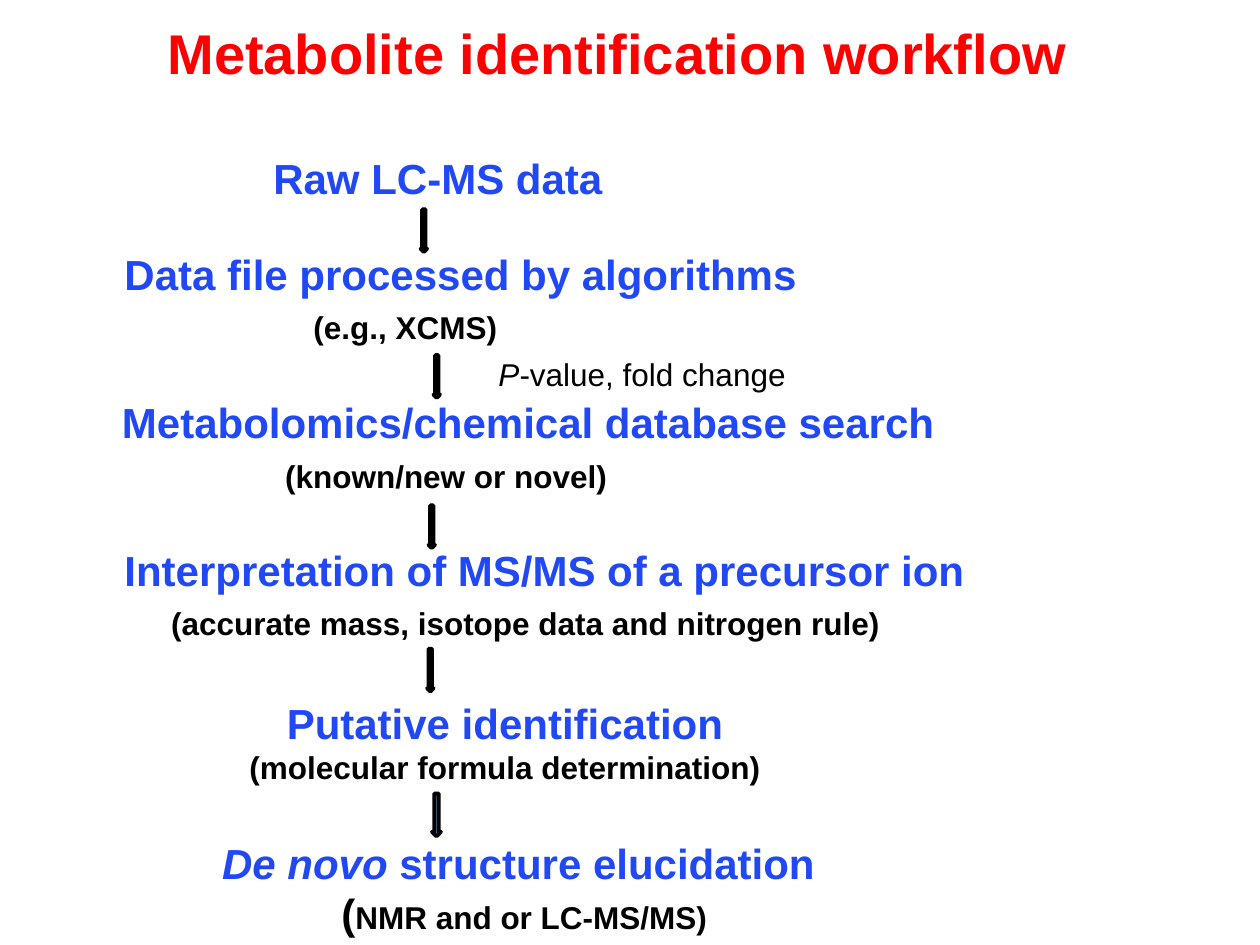
import pptx
import pptx.util
import pptx.dml.color
import pptx.enum.shapes
import pptx.enum.text

Cm, Pt = pptx.util.Cm, pptx.util.Pt
ALIGN = pptx.enum.text.PP_ALIGN
SHAPES = pptx.enum.shapes.MSO_SHAPE

RED, BLUE, BLACK, WHITE, ARROW_FILL = "FF0000", "2048F5", "000000", "FFFFFF", "4F81BD"
STEP_SIZE, NOTE_SIZE = 24, 18


def rgb(value):
    return pptx.dml.color.RGBColor.from_string(value)


class Workflow:
    """Holds the style and the slide being filled."""

    def __init__(self, slide, font="Arial"):
        self.slide = slide
        self.font = font

    def style(self, font, size, color, bold=True):
        font.name, font.size, font.bold = self.font, Pt(size), bold
        font.color.rgb = rgb(color)

    def prepare(self, frame):
        frame.word_wrap = True
        frame.auto_size = pptx.enum.text.MSO_AUTO_SIZE.NONE
        frame.vertical_anchor = pptx.enum.text.MSO_ANCHOR.TOP
        return frame

    def title(self, text, left, top, width, height):
        heading = self.slide.shapes.title
        heading.left, heading.top = Cm(left), Cm(top)
        heading.width, heading.height = Cm(width), Cm(height)
        paragraph = self.prepare(heading.text_frame).paragraphs[0]
        paragraph.text = text
        paragraph.alignment = ALIGN.LEFT
        self.style(paragraph.font, 32, RED)

    def text_box(self, left, top, width, height):
        box = self.slide.shapes.add_textbox(Cm(left), Cm(top), Cm(width), Cm(height))
        return self.prepare(box.text_frame)

    def step(self, left, top, width, height, heading, note=None, indent=0, gap=0, align=ALIGN.LEFT):
        """Blue step heading with an optional black note below it."""
        frame = self.text_box(left, top, width, height)
        first = frame.paragraphs[0]
        first.text = heading
        first.alignment = align
        self.style(first.font, STEP_SIZE, BLUE)
        if note:
            second = frame.add_paragraph()
            second.text = note
            second.alignment = align
            second.space_before = Pt(gap)
            second._p.get_or_add_pPr().set("marL", str(Cm(indent)))
            self.style(second.font, NOTE_SIZE, BLACK)

    def criterion(self, left, top, width, height, italic, rest):
        paragraph = self.text_box(left, top, width, height).paragraphs[0]
        self.style(paragraph.font, NOTE_SIZE, BLACK, bold=False)
        paragraph.add_run().text = italic
        paragraph.runs[0].font.italic = True
        paragraph.add_run().text = rest

    def final_step(self, left, top, width, height, lines):
        """Outlined box; each line is a list of (text, size, color, italic)."""
        box = self.slide.shapes.add_shape(
            SHAPES.RECTANGLE, Cm(left), Cm(top), Cm(width), Cm(height))
        box.shadow.inherit = False
        box.fill.background()
        box.line.color.rgb = rgb(WHITE)
        box.line.width = Pt(0.75)
        frame = self.prepare(box.text_frame)
        for index, parts in enumerate(lines):
            paragraph = frame.add_paragraph() if index else frame.paragraphs[0]
            paragraph.alignment = ALIGN.CENTER
            for text, size, color, italic in parts:
                run = paragraph.add_run()
                run.text = text
                self.style(run.font, size, color)
                run.font.italic = italic

    def arrow(self, left, top, width=0.13):
        arrow = self.slide.shapes.add_shape(
            SHAPES.DOWN_ARROW, Cm(left), Cm(top), Cm(width), Cm(0.86))
        arrow.shadow.inherit = False
        arrow.fill.solid()
        arrow.fill.fore_color.rgb = rgb(ARROW_FILL)
        arrow.line.color.rgb = rgb(BLACK)
        arrow.line.width = Pt(2.25)


def main():
    deck = pptx.Presentation()
    deck.slide_width, deck.slide_height = Cm(25.4), Cm(19.05)
    flow = Workflow(deck.slides.add_slide(deck.slide_layouts[5]))

    flow.title("Metabolite identification workflow", 3.12, 0.25, 18.77, 1.63)
    flow.step(5.26, 2.95, 7.26, 1.27, "Raw LC-MS data")
    flow.step(2.26, 4.88, 14.2, 3.07, "Data file processed by algorithms",
              "(e.g., XCMS)", indent=3.81, gap=5.5)
    flow.criterion(9.8, 7.04, 6.35, 1.02, "P", "-value, fold change")
    flow.step(2.21, 7.87, 17.04, 3.07, "Metabolomics/chemical database search",
              "(known/new or novel)", indent=3.29, gap=5.5)
    flow.step(2.26, 10.85, 17.6, 2.31, "Interpretation of MS/MS of a precursor ion",
              "(accurate mass, isotope data and nitrogen rule)", indent=0.94, gap=5.5)
    flow.step(4.72, 13.94, 10.92, 2.06, "Putative identification",
              "(molecular formula determination)", align=ALIGN.CENTER)
    flow.final_step(4.22, 16.76, 12.7, 3.07, [
        [("De novo ", STEP_SIZE, BLUE, True),
         ("structure elucidation ", STEP_SIZE, BLUE, False)],
        [("(", STEP_SIZE, BLACK, False),
         ("NMR and or LC-MS/MS)", NOTE_SIZE, BLACK, False)],
    ])

    for left, top in [(8.48, 4.22), (8.74, 7.16), (8.64, 10.19), (8.61, 13.08)]:
        flow.arrow(left, top)
    flow.arrow(8.71, 16, width=0.18)

    deck.save("out.pptx")


if __name__ == "__main__":
    main()
